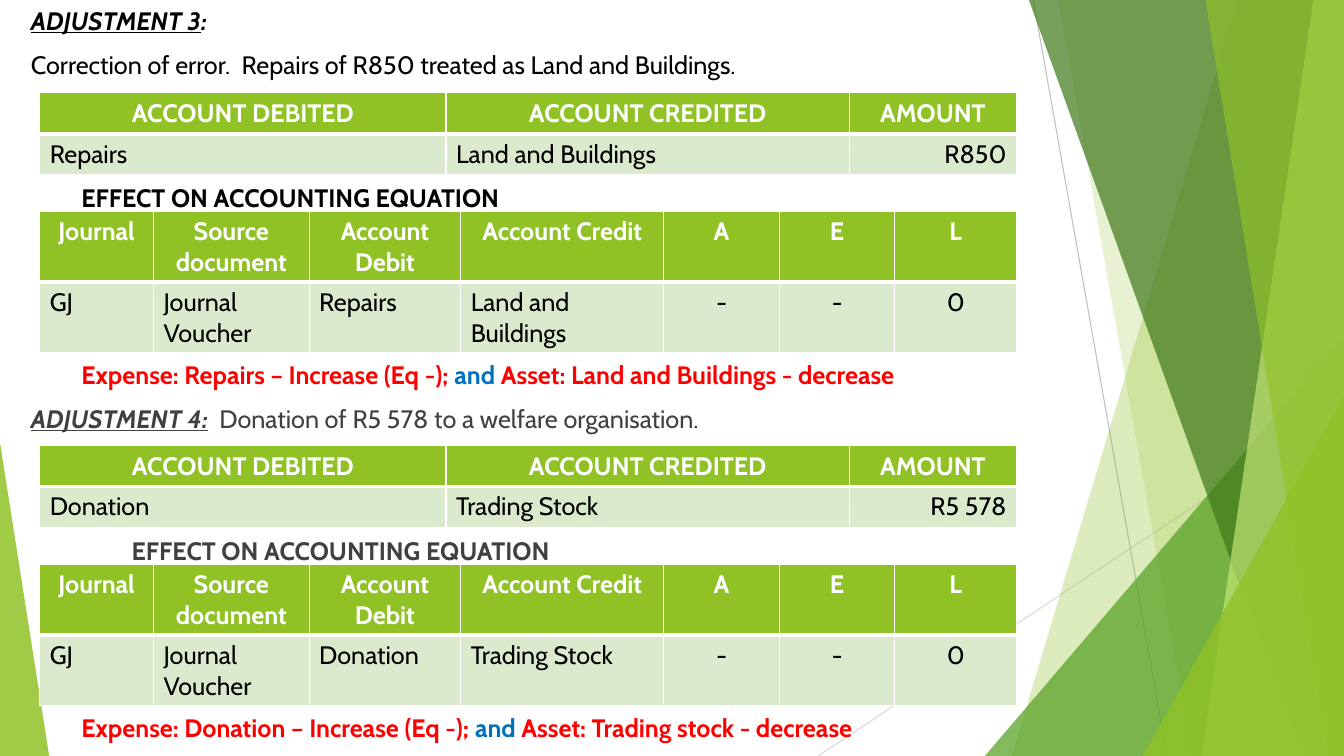
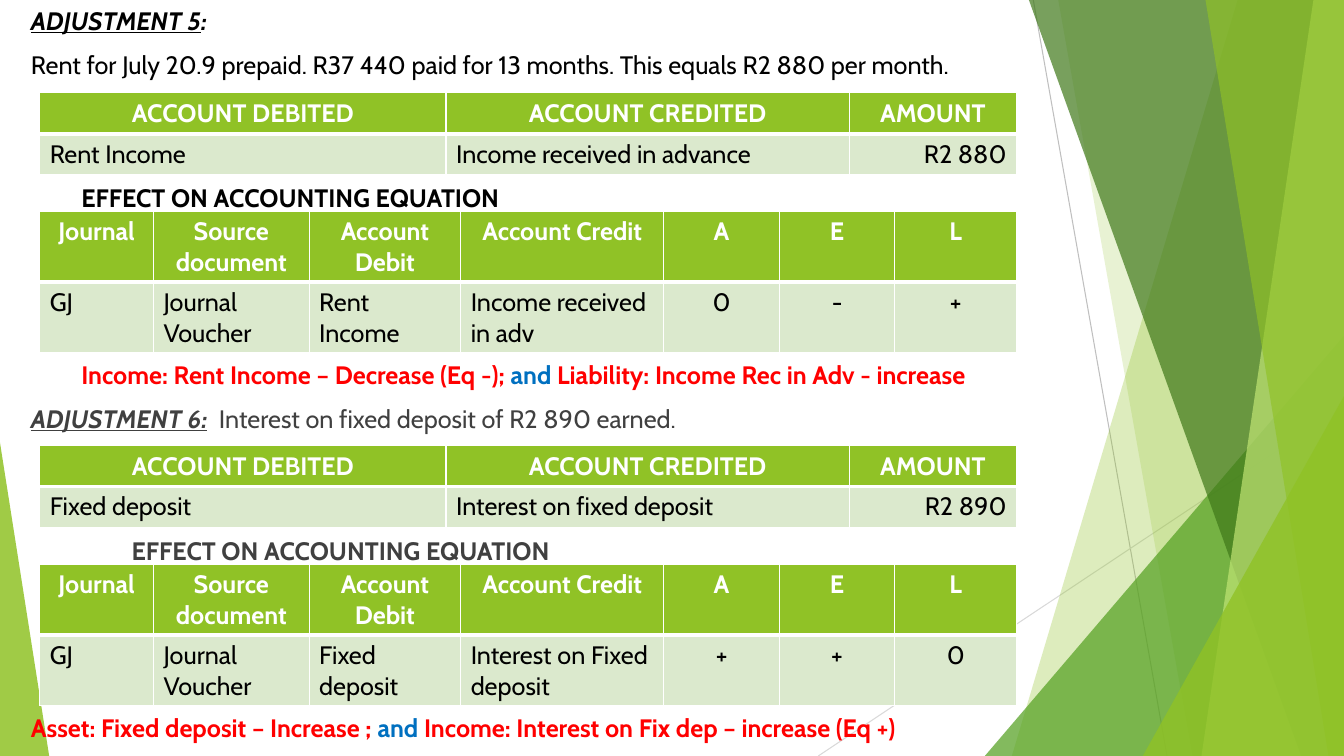
from dataclasses import dataclass

from pptx import Presentation
from pptx.dml.color import RGBColor
from pptx.enum.shapes import MSO_CONNECTOR, MSO_SHAPE
from pptx.enum.text import PP_ALIGN
from pptx.oxml.ns import qn
from pptx.oxml.xmlchemy import OxmlElement
from pptx.util import Cm, Pt

STRAIGHT = MSO_CONNECTOR.STRAIGHT
TRIANGLE = MSO_SHAPE.ISOSCELES_TRIANGLE
LEFT, CENTER, RIGHT = PP_ALIGN.LEFT, PP_ALIGN.CENTER, PP_ALIGN.RIGHT

# Colours
WHITE = RGBColor(0xFF, 0xFF, 0xFF)
BLACK = RGBColor(0x00, 0x00, 0x00)
CHARCOAL = RGBColor(0x40, 0x40, 0x40)
RED = RGBColor(0xFF, 0x00, 0x00)
BLUE = RGBColor(0x00, 0x70, 0xC0)
LIME = RGBColor(0x90, 0xC2, 0x26)
PALE_LIME = RGBColor(0xC0, 0xE4, 0x74)
LEAF = RGBColor(0x54, 0xA0, 0x21)
FOREST = RGBColor(0x3F, 0x78, 0x19)
ROW_TINT = RGBColor(0xDB, 0xE9, 0xCD)
SILVER = RGBColor(0xBF, 0xBF, 0xBF)
LIGHT_SILVER = RGBColor(0xD9, 0xD9, 0xD9)

# Text styles
PLAIN = {"name": "Cabin", "size": Pt(18), "bold": False}
BOLD = PLAIN | {"bold": True}
BOLD_ITALIC = BOLD | {"italic": True}
LABEL = BOLD_ITALIC | {"underline": True}

# Page geometry, in centimetres
WIDTH, HEIGHT = 33.87, 19.05
TEXT_LEFT, TEXT_WIDTH = 0.53, 28
TABLE_LEFT = 1
ENTRY_TOP, EQUATION_TOP, ADJUSTMENT_PITCH = 2.34, 5.33, 8.89
INDENT = 1.27

# Paragraph gaps, in points; a table takes the room of whole text lines
GAP, LINE_PITCH = 10, 31.6
ENTRY_GAP = GAP + 2 * LINE_PITCH
EQUATION_GAP = GAP + 3 * LINE_PITCH

ENTRY_HEADS = ("ACCOUNT DEBITED", "ACCOUNT CREDITED", "AMOUNT")
ENTRY_COLUMNS = (10.24, 10.16, 4.22)
ENTRY_ALIGNS = (LEFT, LEFT, RIGHT)
EQUATION_HEADS = ("Journal", "Source document", "Account Debit",
                  "Account Credit", "A", "E", "L")
EQUATION_COLUMNS = (2.87, 3.92, 3.82, 5.12, 2.91, 2.91, 3.07)
EQUATION_ALIGNS = (LEFT,) * 4 + (CENTER,) * 3
ENTRY_ROW, EQUATION_ROW = 1.03, 1.78


@dataclass
class Adjustment:
    number: int
    event: str
    debit: str
    credit: str
    amount: str
    credit_in_equation: str
    effects: str  # signs for A, E and L
    debit_effect: str
    credit_effect: str
    effect_indent: int = 1


PAGES = (
    (
        Adjustment(3, "Correction of error.  Repairs of R850 treated as Land and Buildings.",
                   "Repairs", "Land and Buildings", "R850", "Land and Buildings", "--0",
                   "Expense: Repairs – Increase (Eq -); ",
                   " Asset: Land and Buildings - decrease"),
        Adjustment(4, "Donation of R5 578 to a welfare organisation.",
                   "Donation", "Trading Stock", "R5 578", "Trading Stock", "--0",
                   "Expense: Donation – Increase (Eq -); ",
                   " Asset: Trading stock - decrease"),
    ),
    (
        Adjustment(5, "Rent for July 20.9 prepaid. R37 440 paid for 13 months. "
                   "This equals R2 880 per month.",
                   "Rent Income", "Income received in advance", "R2 880",
                   "Income received in adv", "0-+",
                   "Income: Rent Income – Decrease (Eq -); ",
                   " Liability: Income Rec in Adv - increase"),
        Adjustment(6, "Interest on fixed deposit of R2 890 earned.",
                   "Fixed deposit", "Interest on fixed deposit", "R2 890",
                   "Interest on Fixed deposit", "++0",
                   "Asset: Fixed deposit – Increase ; ",
                   " Income: Interest on Fix dep – increase (Eq +)", 0),
    ),
)


def add_run(paragraph, text, style, color):
    run = paragraph.add_run()
    run.text = text
    for attribute, value in style.items():
        setattr(run.font, attribute, value)
    run.font.color.rgb = color


def fill_translucent(shape, color, opacity):
    shape.shadow.inherit = False
    shape.line.fill.background()
    shape.fill.solid()
    shape.fill.fore_color.rgb = color
    alpha = OxmlElement("a:alpha")
    alpha.set("val", str(opacity * 1000))
    next(shape._element.spPr.iter(qn("a:srgbClr"))).append(alpha)


# Faceted green backdrop
def add_ray(shapes, start, end, color):
    ray = shapes.add_connector(STRAIGHT, *(Cm(v) for v in start + end))
    ray.line.color.rgb = color
    ray.line.width = Pt(0.75)
    ray._element.spPr.append(OxmlElement("a:effectLst"))


def add_right_band(shapes, top_x, bottom_x, color, opacity):
    """Fill from a slanted edge to the right side of the slide."""
    outline = shapes.build_freeform(Cm(top_x), 0)
    corners = ((WIDTH, 0), (WIDTH, HEIGHT), (bottom_x, HEIGHT))
    outline.add_line_segments([(Cm(x), Cm(y)) for x, y in corners])
    fill_translucent(outline.convert_to_shape(), color, opacity)


def add_corner(shapes, left, top, width, apex, color, opacity):
    corner = shapes.add_shape(TRIANGLE, Cm(left), Cm(top), Cm(width), Cm(HEIGHT - top))
    corner.adjustments[0] = apex
    fill_translucent(corner, color, opacity)


def add_backdrop(slide):
    facets = slide.shapes.add_group_shape().shapes
    add_ray(facets, (26.04, 0), (29.41, HEIGHT), SILVER)
    add_ray(facets, (WIDTH, 10.24), (20.62, HEIGHT), LIGHT_SILVER)
    add_right_band(facets, 31.19, 25.5, LIME, 30)
    add_right_band(facets, 26.67, 30.05, LIME, 20)
    add_corner(facets, 24.82, 8.46, 9.05, 1, LEAF, 72)
    add_right_band(facets, 25.93, 32.79, FOREST, 70)
    add_right_band(facets, 33.1, 30.28, PALE_LIME, 70)
    add_right_band(facets, 30.38, 33.48, LIME, 65)
    add_corner(facets, 28.8, 9.98, 5.07, 1, LIME, 80)
    add_corner(facets, 0, 11.15, 1.24, 0, LIME, 85)


# Running text around the tables
def narrative_lines(upper, lower):
    """Yield (space before, indent steps, runs) for each paragraph."""
    heading = "EFFECT ON ACCOUNTING EQUATION"

    def effect(item):
        runs = ((item.debit_effect, BOLD, RED), ("and", BOLD, BLUE),
                (item.credit_effect, BOLD, RED))
        return EQUATION_GAP, item.effect_indent, runs

    yield 0, 0, ((f"ADJUSTMENT {upper.number}", LABEL, BLACK), (":", BOLD_ITALIC, BLACK))
    yield GAP, 0, ((upper.event, PLAIN, BLACK),)
    yield ENTRY_GAP, 1, ((heading, BOLD, BLACK),)
    yield effect(upper)
    yield GAP, 0, ((f"ADJUSTMENT {lower.number}:", LABEL, CHARCOAL),
                   (f"  {lower.event}", PLAIN, CHARCOAL))
    yield ENTRY_GAP, 2, ((heading, BOLD, CHARCOAL),)
    yield effect(lower)


def add_narrative(slide, upper, lower):
    frame = slide.shapes.add_textbox(
        Cm(TEXT_LEFT), 0, Cm(TEXT_WIDTH), Cm(HEIGHT)).text_frame
    frame.word_wrap = True
    for index, (space, steps, runs) in enumerate(narrative_lines(upper, lower)):
        paragraph = frame.add_paragraph() if index else frame.paragraphs[0]
        paragraph.space_before = Pt(space)
        paragraph._p.get_or_add_pPr().set("marL", str(Cm(INDENT * steps)))
        for text, style, color in runs:
            add_run(paragraph, text, style, color)


# Tables
def add_borders(cell, bottom_width):
    properties = cell._tc.get_or_add_tcPr()
    for side, width in (("L", 1), ("R", 1), ("T", 1), ("B", bottom_width)):
        border = OxmlElement(f"a:ln{side}")
        border.set("w", str(Pt(width)))
        paint = OxmlElement("a:solidFill")
        color = OxmlElement("a:srgbClr")
        color.set("val", str(WHITE))
        paint.append(color)
        border.append(paint)
        properties.append(border)


def add_ledger(slide, left, top, columns, row_height, heads, values, aligns):
    ledger = slide.shapes.add_table(
        2, len(columns), Cm(left), Cm(top), Cm(sum(columns)), Cm(2 * row_height)).table
    ledger.first_row = ledger.horz_banding = False
    for column, width in zip(ledger.columns, columns):
        column.width = Cm(width)
    rows = (
        (heads, (CENTER,) * len(heads), BOLD, WHITE, LIME, 3),
        (values, aligns, PLAIN, BLACK, ROW_TINT, 1),
    )
    for row, (texts, row_aligns, style, color, tint, rule) in zip(ledger.rows, rows):
        row.height = Cm(row_height)
        for cell, text, align in zip(row.cells, texts, row_aligns):
            add_borders(cell, rule)
            cell.fill.solid()
            cell.fill.fore_color.rgb = tint
            paragraph = cell.text_frame.paragraphs[0]
            paragraph.alignment = align
            add_run(paragraph, text, style, color)


def add_adjustment_tables(slide, left, top, item):
    add_ledger(slide, left, top, ENTRY_COLUMNS, ENTRY_ROW, ENTRY_HEADS,
               (item.debit, item.credit, item.amount), ENTRY_ALIGNS)
    add_ledger(slide, left, top + EQUATION_TOP - ENTRY_TOP, EQUATION_COLUMNS,
               EQUATION_ROW, EQUATION_HEADS,
               ("GJ", "Journal Voucher", item.debit, item.credit_in_equation,
                *item.effects), EQUATION_ALIGNS)


def add_page(deck, adjustments):
    slide = deck.slides.add_slide(deck.slide_layouts[6])
    add_backdrop(slide)
    add_narrative(slide, *adjustments)
    for index, item in enumerate(adjustments):
        add_adjustment_tables(slide, TABLE_LEFT, ENTRY_TOP + index * ADJUSTMENT_PITCH, item)


def main():
    deck = Presentation()
    deck.slide_width, deck.slide_height = Cm(WIDTH), Cm(HEIGHT)
    for adjustments in PAGES:
        add_page(deck, adjustments)
    deck.save("out.pptx")


if __name__ == "__main__":
    main()
